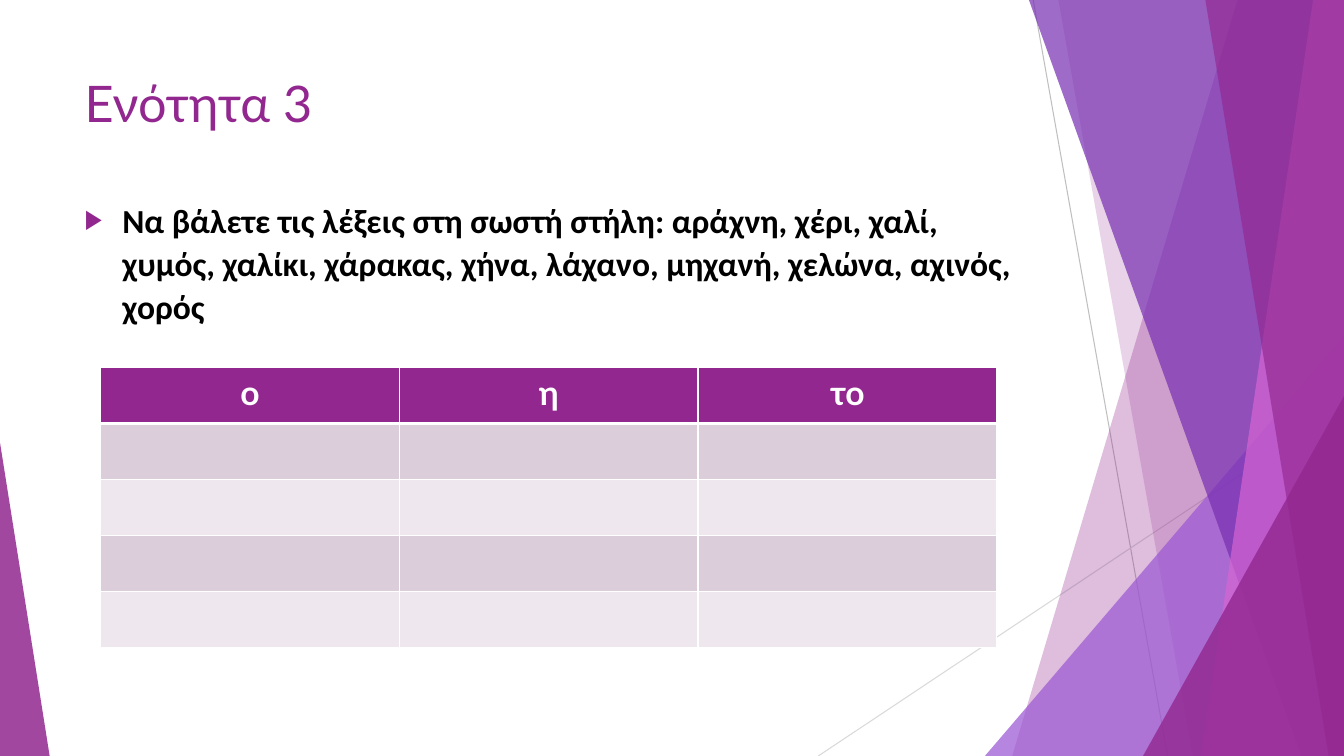
from lxml import etree
from pptx import Presentation
from pptx.dml.color import RGBColor
from pptx.enum.shapes import MSO_CONNECTOR, MSO_SHAPE
from pptx.enum.text import MSO_ANCHOR, PP_ALIGN
from pptx.oxml.ns import qn
from pptx.util import Pt

STRAIGHT = MSO_CONNECTOR.STRAIGHT
TRIANGLE = MSO_SHAPE.ISOSCELES_TRIANGLE
TOP = MSO_ANCHOR.TOP
LEFT, CENTER = PP_ALIGN.LEFT, PP_ALIGN.CENTER

WIDTH, HEIGHT = 960, 540
PURPLE, WHITE, BLACK = "92278F", "FFFFFF", "000000"
BAND_COLORS = ("DCCDDB", "EEE8EE")
HEADINGS = ("ο", "η", "το")
TABLE_ROWS = 5
EXERCISE = ("Να βάλετε τις λέξεις στη σωστή στήλη: αράχνη, χέρι, χαλί, χυμός, "
            "χαλίκι, χάρακας, χήνα, λάχανο, μηχανή, χελώνα, αχινός, χορός")


def rgb(color):
    return RGBColor.from_string(color)


def add_element(parent, tag, **attributes):
    element = etree.SubElement(parent, qn(tag))
    for name, value in attributes.items():
        element.set(name, str(value))
    return element


def paint(shape, color, opacity):
    """Fill a shape with a see-through colour and no outline."""
    shape.shadow.inherit = False
    shape.fill.solid()
    shape.fill.fore_color.rgb = rgb(color)
    shape.line.fill.background()
    color_element = shape.fill._xPr.find(qn("a:solidFill"))[0]
    add_element(color_element, "a:alpha", val=opacity * 1000)


def add_thin_line(slide, start, end, color):
    line = slide.shapes.add_connector(STRAIGHT, *map(Pt, start + end))
    line.line.color.rgb = rgb(color)
    line.line.width = Pt(0.75)
    add_element(line._element.spPr, "a:effectLst")


def add_band(slide, top_left, bottom_left, color, opacity, top_right=WIDTH):
    """A full-height band that runs to the right edge of the slide."""
    builder = slide.shapes.build_freeform(Pt(top_left), 0, scale=1.0)
    corners = [(top_right, 0), (WIDTH, HEIGHT), (bottom_left, HEIGHT)]
    builder.add_line_segments([(Pt(x), Pt(y)) for x, y in corners], close=True)
    paint(builder.convert_to_shape(), color, opacity)


def add_triangle(slide, left, top, width, apex, color, opacity):
    """A right triangle standing on the bottom edge of the slide."""
    shape = slide.shapes.add_shape(TRIANGLE, Pt(left), Pt(top), Pt(width), Pt(HEIGHT - top))
    shape.adjustments[0] = apex
    paint(shape, color, opacity)


def write(frame, text, size=24, font="Lato", color=BLACK, bold=False, align=LEFT):
    frame.word_wrap = True
    para = frame.paragraphs[0]
    para.alignment = align
    span = para.add_run()
    span.text = text
    span.font.size = Pt(size)
    span.font.name = font
    span.font.bold = bold
    span.font.color.rgb = rgb(color)
    return para


def add_bullet(para, indent):
    properties = para._p.get_or_add_pPr()
    properties.set("marL", str(Pt(indent)))
    properties.set("indent", str(-Pt(indent)))
    add_element(add_element(properties, "a:buClr"), "a:srgbClr", val=PURPLE)
    add_element(properties, "a:buSzPct", val=80000)
    add_element(properties, "a:buFont", typeface="Calibri")
    add_element(properties, "a:buChar", char="▶")


def format_cell(cell, color, top_width, bottom_width):
    properties = cell._tc.get_or_add_tcPr()
    widths = {"a:lnL": 1, "a:lnR": 1, "a:lnT": top_width, "a:lnB": bottom_width}
    for tag, width in widths.items():
        border = add_element(properties, tag, w=Pt(width))
        add_element(add_element(border, "a:solidFill"), "a:srgbClr", val=WHITE)
    cell.fill.solid()
    cell.fill.fore_color.rgb = rgb(color)


def add_decoration(slide):
    add_thin_line(slide, (738, 0), (834, HEIGHT), "BFBFBF")
    add_thin_line(slide, (WIDTH, 290), (584.5, HEIGHT), "D9D9D9")
    add_band(slide, 884, 723, PURPLE, 30)
    add_band(slide, 756, 852, PURPLE, 20)
    add_triangle(slide, 703.5, 240, 256.5, 1, "9B57D3", 72)
    add_band(slide, 735, 929.5, "762EB1", 70)
    add_band(slide, 938, 858, "D665D3", 70)
    add_band(slide, 861, 949, PURPLE, 65)
    add_triangle(slide, 816.5, 283, 143.5, 1, PURPLE, 80)
    add_triangle(slide, 0, 316, 35.5, 0, PURPLE, 85)


def add_title(slide, text):
    title = slide.shapes.title
    title.left, title.top, title.width, title.height = map(Pt, (53.3, 48, 677, 104))
    title.text_frame.vertical_anchor = TOP
    write(title.text_frame, text, size=36, color=PURPLE)


def add_exercise(slide, text):
    box = slide.shapes.add_textbox(Pt(53.3), Pt(137), Pt(677), Pt(339))
    para = write(box.text_frame, text, font="Calibri", bold=True)
    add_bullet(para, 27)
    para.line_spacing = 1.07
    para.space_after = Pt(8)


def add_word_table(slide):
    frame = slide.shapes.add_table(TABLE_ROWS, len(HEADINGS), Pt(72), Pt(262.4), Pt(640), Pt(200))
    for row_index, row in enumerate(frame.table.rows):
        for cell, heading in zip(row.cells, HEADINGS):
            if row_index == 0:
                format_cell(cell, PURPLE, 1, 3)
                write(cell.text_frame, heading, color=WHITE, bold=True, align=CENTER)
            else:
                color = BAND_COLORS[(row_index - 1) % 2]
                format_cell(cell, color, 3 if row_index == 1 else 1, 1)


def main():
    deck = Presentation()
    deck.slide_width, deck.slide_height = Pt(WIDTH), Pt(HEIGHT)
    page = deck.slides.add_slide(deck.slide_layouts[5])
    add_decoration(page)
    add_title(page, "Ενότητα 3")
    add_exercise(page, EXERCISE)
    add_word_table(page)
    deck.save("out.pptx")


if __name__ == "__main__":
    main()
